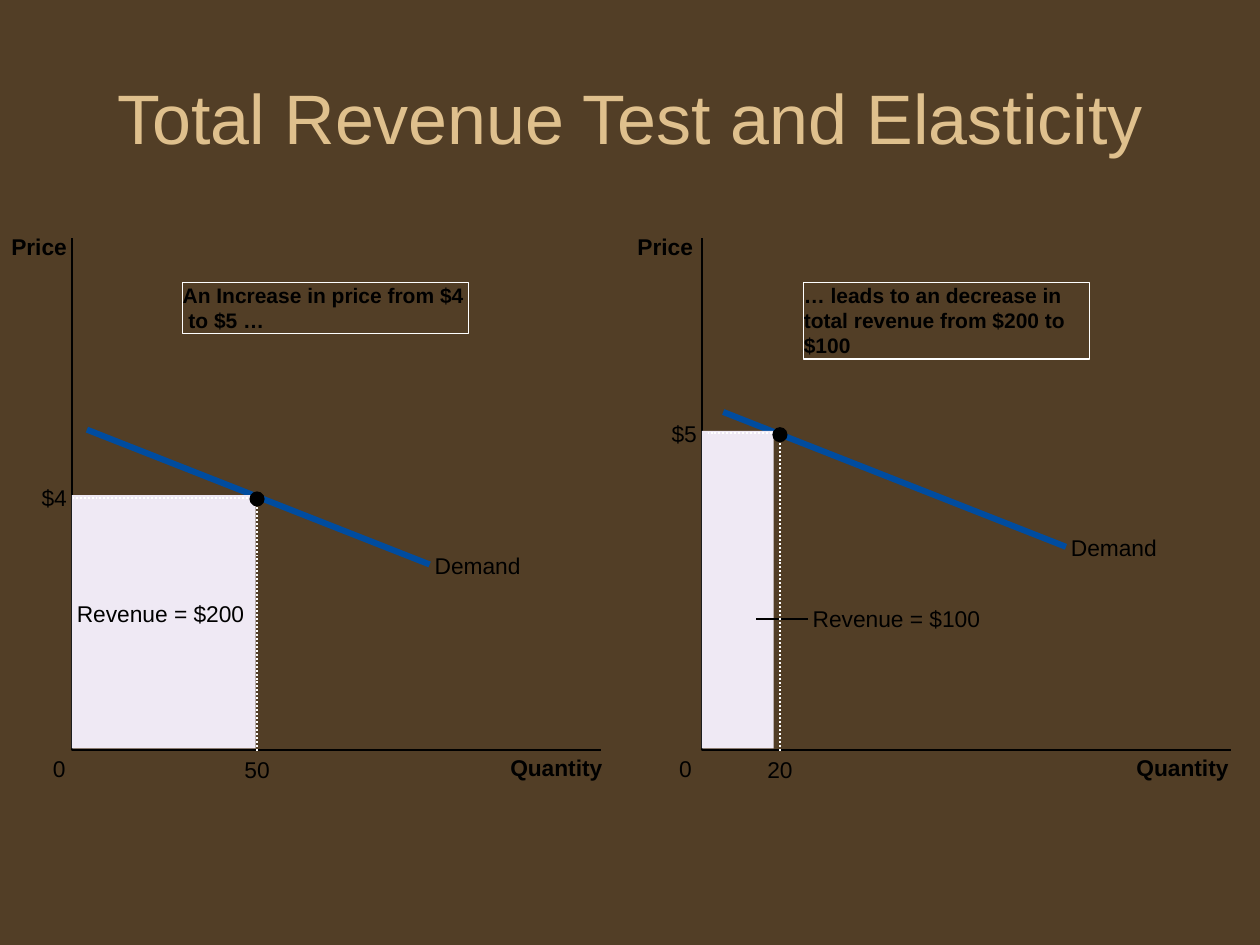
"""Build a slide comparing total revenue before and after a price increase."""
import pptx
import pptx.dml.color
import pptx.enum.dml
import pptx.enum.shapes
import pptx.enum.text
import pptx.oxml
import pptx.util
from pptx.util import Inches

RGBColor = pptx.dml.color.RGBColor
BROWN = RGBColor(0x52, 0x3E, 0x26)
GOLD = RGBColor(0xDF, 0xC0, 0x8D)
BLUE = RGBColor(0x00, 0x4C, 0x9F)
LILAC = RGBColor(0xEF, 0xE9, 0xF4)
BLACK = RGBColor(0x00, 0x00, 0x00)
WHITE = RGBColor(0xFF, 0xFF, 0xFF)
SHAPE = pptx.enum.shapes.MSO_SHAPE
ANCHOR = pptx.enum.text.MSO_ANCHOR
ALIGN = pptx.enum.text.PP_ALIGN
GROW = pptx.enum.text.MSO_AUTO_SIZE.SHAPE_TO_FIT_TEXT
DOTTED = pptx.enum.dml.MSO_LINE.ROUND_DOT
NO_EFFECT = '<a:effectLst xmlns:a="http://schemas.openxmlformats.org/drawingml/2006/main"/>'


class Board:
    def __init__(self, slide, font="Arial"):
        self.s = slide
        self.font = font

    def set_text(self, sp, lines, size, color=BLACK, bold=False, align=ALIGN.LEFT):
        tf = sp.text_frame
        for i, line in enumerate(lines):
            p = tf.add_paragraph() if i else tf.paragraphs[0]
            p.text = line
            p.alignment = align
            p.font.name = self.font
            p.font.size = pptx.util.Pt(size)
            p.font.bold = bold
            p.font.color.rgb = color

    def fit(self, sp, wrap):
        tf = sp.text_frame
        tf.margin_left = tf.margin_top = tf.margin_right = tf.margin_bottom = 0
        tf.vertical_anchor = ANCHOR.TOP
        tf.word_wrap = wrap
        tf.auto_size = GROW

    def title(self, text):
        sp = self.s.shapes.add_textbox(Inches(0.5), Inches(0.3), Inches(9), Inches(1.25))
        sp.text_frame.word_wrap = True
        sp.text_frame.vertical_anchor = ANCHOR.MIDDLE
        self.set_text(sp, [text], 40, GOLD, align=ALIGN.CENTER)

    def label(self, text, x, y, w, h=0.22, bold=False):
        sp = self.s.shapes.add_textbox(Inches(x), Inches(y), Inches(w), Inches(h))
        self.fit(sp, False)
        self.set_text(sp, [text], 13, bold=bold)

    def shape(self, kind, x, y, w, h, fill):
        sp = self.s.shapes.add_shape(kind, Inches(x), Inches(y), Inches(w), Inches(h))
        sp.shadow.inherit = False
        sp.fill.solid()
        sp.fill.fore_color.rgb = fill
        sp.line.fill.background()
        return sp

    def note(self, lines, x, y, w, h):
        sp = self.shape(SHAPE.RECTANGLE, x, y, w, h, BROWN)
        sp.line.color.rgb = WHITE
        sp.line.width = pptx.util.Pt(0.75)
        self.fit(sp, True)
        self.set_text(sp, lines, 12, bold=True)

    def line(self, x1, y1, x2, y2, color, width):
        c = self.s.shapes.add_connector(
            pptx.enum.shapes.MSO_CONNECTOR.STRAIGHT,
            Inches(x1), Inches(y1), Inches(x2), Inches(y2))
        c.line.color.rgb = color
        c.line.width = pptx.util.Pt(width)
        c.element.spPr.append(pptx.oxml.parse_xml(NO_EFFECT))

    def polyline(self, points, color, dash=None):
        start, *rest = [(Inches(x), Inches(y)) for x, y in points]
        fb = self.s.shapes.build_freeform(*start)
        fb.add_line_segments(rest, close=False)
        sp = fb.convert_to_shape()
        sp.shadow.inherit = False
        sp.fill.background()
        sp.line.color.rgb = color
        sp.line.width = pptx.util.Pt(1.13)
        if dash:
            sp.line.dash_style = dash

    def axes(self, x, label_shift):
        self.polyline([(x, 1.89), (x, 5.95), (x + 4.2, 5.95)], BLACK)
        self.label("Price", 0.09 + label_shift, 1.85, 0.54, 0.28, bold=True)
        self.label("0", 0.42 + label_shift, 5.99, 0.18, 0.27)
        self.label("Quantity", 4.05 + label_shift, 5.98, 0.83, 0.28, bold=True)

    def demand(self, x, y):
        end_x, end_y = x + 2.72, y + 1.07
        self.line(x, y, end_x, end_y, BLUE, 3.5)
        self.label("Demand", end_x + 0.04, end_y - 0.1, 0.76, 0.27)

    def area(self, x, y, w):
        self.shape(SHAPE.RECTANGLE, x, y - 0.02, w, 5.96 - y, LILAC)

    def point(self, axis_x, x, y, w, price, quantity):
        self.polyline([(x, 5.96), (x, y), (x - w, y)], WHITE, DOTTED)
        self.shape(SHAPE.OVAL, x - 0.06, y - 0.05, 0.12, 0.12, BLACK)
        self.label(price, axis_x - 0.24, y - 0.11, 0.2)
        self.label(quantity, x - 0.1, 6, 0.2)


def main():
    prs = pptx.Presentation()
    prs.slide_width, prs.slide_height = Inches(10), Inches(7.5)
    s = prs.slides.add_slide(prs.slide_layouts[6])
    s.background.fill.solid()
    s.background.fill.fore_color.rgb = BROWN
    board = Board(s)
    left, right = 0.57, 5.57

    board.axes(left, 0)
    board.axes(right, 4.97)
    board.demand(0.69, 3.41)
    board.area(left, 3.95, 1.46)
    board.label("Revenue = $200", 0.61, 4.76, 1.38)
    board.demand(5.74, 3.27)
    board.area(right, 3.44, 0.57)
    board.line(6, 4.91, 6.41, 4.91, BLACK, 1.13)
    board.label("Revenue = $100", 6.45, 4.8, 1.38)
    board.point(right, 6.19, 3.44, 0.57, "$5", "20")
    board.note(["An Increase in price from $4", " to $5 …"], 1.45, 2.24, 2.27, 0.41)
    board.note(["… leads to an decrease in total revenue from $200 to $100"],
               6.38, 2.24, 2.27, 0.61)
    board.point(left, 2.04, 3.95, 1.46, "$4", "50")
    board.title("Total Revenue Test and Elasticity")
    prs.save("out.pptx")


if __name__ == "__main__":
    main()
